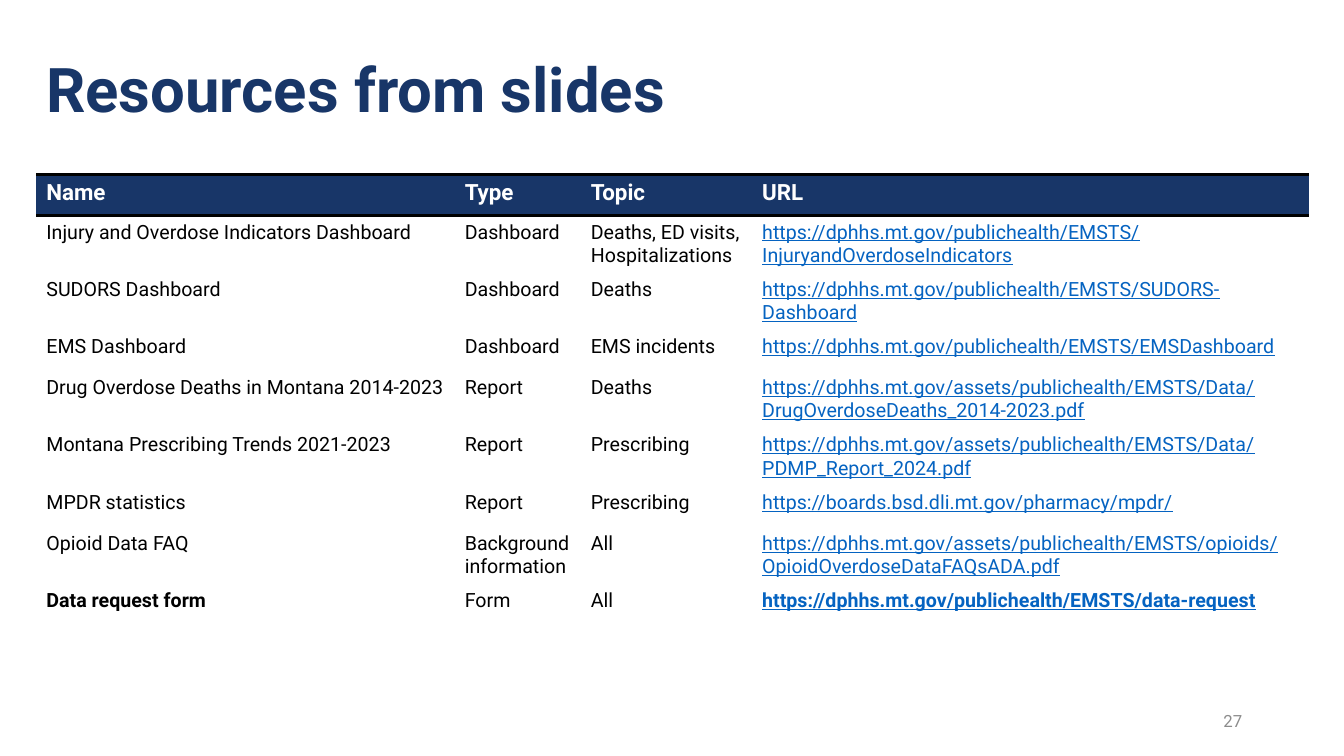
import pptx
import pptx.dml.color
import pptx.enum.text
import pptx.oxml
import pptx.oxml.ns
import pptx.util

WIDE, HIGH = 13.33, 7.5
NAVY, LINK, BLACK, WHITE, GREY = "183668", "0563C1", "000000", "FFFFFF", "8C8C8C"
PLAIN = "{2D5ABB26-0587-4C30-8999-92F81FD0307C}"  # table style without grid
LEFT = 0.36
COLS = [4.15, 1.25, 1.7, 5.52]
ROW = 0.41
SITE = "https://dphhs.mt.gov/"
PAGE = SITE + "publichealth/EMSTS/"
FILE = SITE + "assets/publichealth/EMSTS/"
HEAD = ["Name", "Type", "Topic", "URL"]
ROWS = [
    ["Injury and Overdose Indicators Dashboard", "Dashboard",
     "Deaths, ED visits, Hospitalizations", PAGE + "InjuryandOverdoseIndicators"],
    ["SUDORS Dashboard", "Dashboard", "Deaths", PAGE + "SUDORS-Dashboard"],
    ["EMS Dashboard", "Dashboard", "EMS incidents", PAGE + "EMSDashboard"],
    ["Drug Overdose Deaths in Montana 2014-2023", "Report", "Deaths",
     FILE + "Data/DrugOverdoseDeaths_2014-2023.pdf"],
    ["Montana Prescribing Trends 2021-2023", "Report", "Prescribing",
     FILE + "Data/PDMP_Report_2024.pdf"],
    ["MPDR statistics", "Report", "Prescribing",
     "https://boards.bsd.dli.mt.gov/pharmacy/mpdr/"],
    ["Opioid Data FAQ", "Background information", "All",
     FILE + "opioids/OpioidOverdoseDataFAQsADA.pdf"],
    ["Data request form", "Form", "All", PAGE + "data-request"],
]


def inch(size):
    return pptx.util.Inches(size)


def tint(code):
    return pptx.dml.color.RGBColor.from_string(code)


def write(frame, text, size=14, color=BLACK, bold=False, line=False,
          align=None, space=None):
    para = frame.paragraphs[0]
    para.alignment = align
    para.line_spacing = space
    run = para.add_run()
    run.text = text
    font = run.font
    font.name, font.size = "Roboto", pptx.util.Pt(size)
    font.bold, font.underline = bold, line
    font.color.rgb = tint(color)


def label(slide, box, text, **look):
    frame = slide.shapes.add_textbox(*map(inch, box)).text_frame
    frame.word_wrap = True
    frame.vertical_anchor = pptx.enum.text.MSO_ANCHOR.MIDDLE
    write(frame, text, **look)


def rule(cell, side, color=BLACK, width=2):
    space = pptx.oxml.ns.nsdecls("a")
    cell._tc.get_or_add_tcPr().append(pptx.oxml.parse_xml(
        f'<a:ln{side} {space} w="{pptx.util.Pt(width)}"><a:solidFill>'
        f'<a:srgbClr val="{color}"/></a:solidFill></a:ln{side}>'))


def paint(cell, color):
    cell.fill.solid()
    cell.fill.fore_color.rgb = tint(color)


def grid(slide, top):
    count = len(ROWS) + 1
    table = slide.shapes.add_table(
        count, len(COLS), inch(LEFT), inch(top),
        inch(sum(COLS)), inch(ROW * count)).table
    table.horz_banding = False
    table._tbl.tblPr.find(pptx.oxml.ns.qn("a:tableStyleId")).text = PLAIN
    for col, width in zip(table.columns, COLS):
        col.width = inch(width)
    for row in table.rows:
        row.height = inch(ROW)

    # Header row with rules above and below
    for col, text in enumerate(HEAD):
        cell = table.cell(0, col)
        for side in "TB":
            rule(cell, side)
        paint(cell, NAVY)
        write(cell.text_frame, text, size=16, color=WHITE, bold=True)

    # Resource rows: links in the last column, key entry in bold
    last = len(COLS) - 1
    for row, texts in enumerate(ROWS, 1):
        for col, text in enumerate(texts):
            cell = table.cell(row, col)
            paint(cell, WHITE)
            link = col == last
            write(cell.text_frame, text, color=LINK if link else BLACK, line=link,
                  bold=row == len(ROWS) and col in (0, last))


def main():
    deck = pptx.Presentation()
    deck.slide_width, deck.slide_height = inch(WIDE), inch(HIGH)
    slide = deck.slides.add_slide(deck.slide_layouts[6])
    # Title
    label(slide, (LEFT, 0.32, 11.92, 1.2), "Resources from slides",
          size=44, color=NAVY, bold=True, space=0.9)
    # Table of resources
    grid(slide, 1.73)
    # Page number
    label(slide, (9.42, 6.95, 3, 0.4), "27", size=12, color=GREY,
          align=pptx.enum.text.PP_ALIGN.RIGHT)
    deck.save("out.pptx")


if __name__ == "__main__":
    main()
